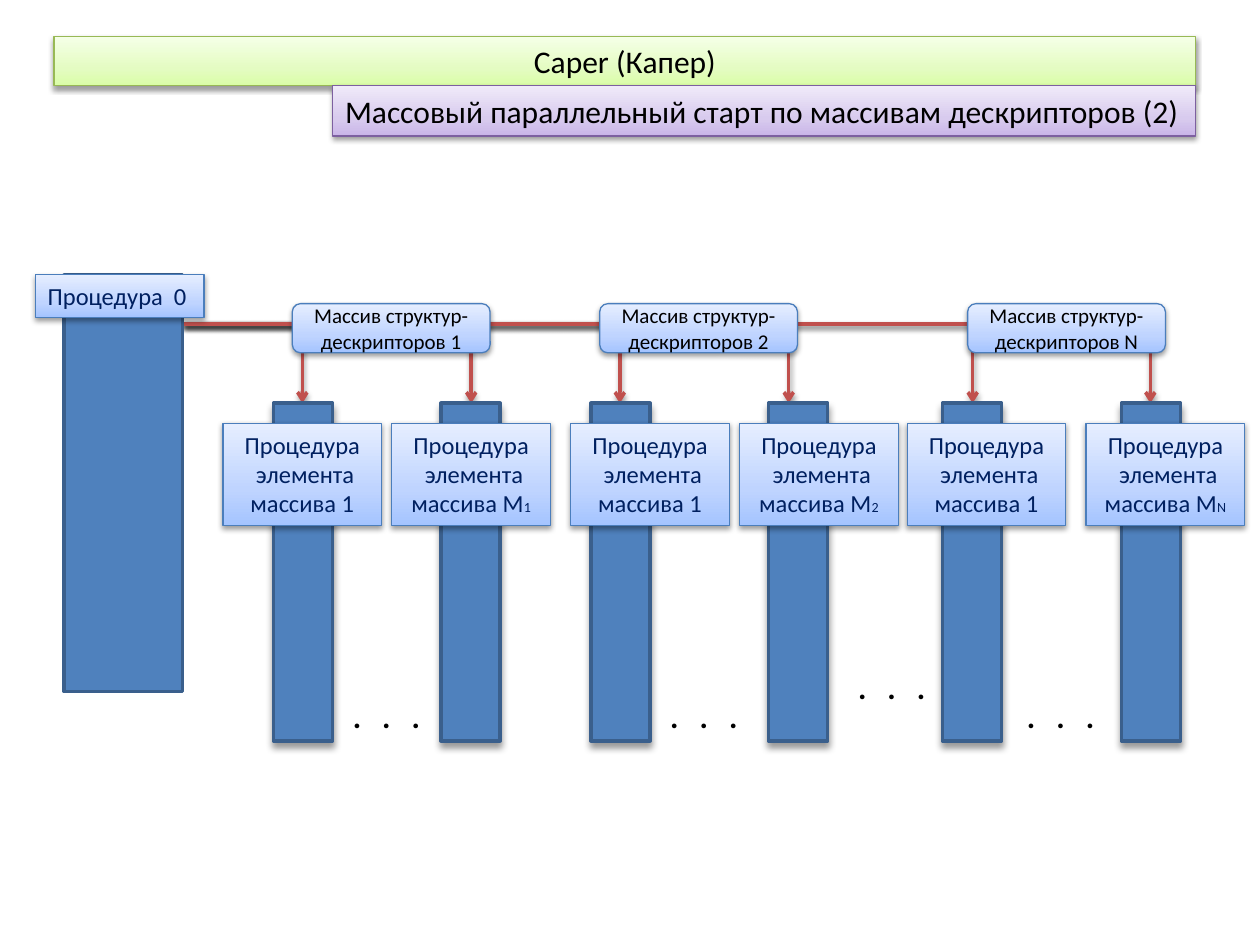
from copy import deepcopy
from lxml import etree
from pptx import Presentation
from pptx.dml.color import RGBColor
from pptx.enum.shapes import MSO_CONNECTOR, MSO_SHAPE
from pptx.enum.text import MSO_ANCHOR, PP_ALIGN
from pptx.oxml import parse_xml
from pptx.oxml.ns import nsdecls, qn
from pptx.util import Inches, Pt

RECT, ROUND = MSO_SHAPE.RECTANGLE, MSO_SHAPE.ROUNDED_RECTANGLE
ELBOW = MSO_CONNECTOR.ELBOW
LEFT, CENTER = PP_ALIGN.LEFT, PP_ALIGN.CENTER
TOP, MIDDLE = MSO_ANCHOR.TOP, MSO_ANCHOR.MIDDLE

COLORS = {
    "arrow": "C0504D", "bar": "4F81BD", "bar_line": "3A5F8C",
    "label": "002060", "text": "000000",
    "green_line": "98B955", "violet_line": "7D60A0", "blue_line": "4B7EBC",
}
GRADIENTS = {
    "green": ("DAFDA7", "E4FCC2", "F5FFE7"),
    "violet": ("C9B5E8", "D8CBEE", "F0EAF9"),
    "blue": ("A4C4FF", "BFD4FF", "E6EEFF"),
}
BOX_SHADOW, BAR_SHADOW = (40000, 20000, 38000), (50800, 38100, 40000)


def set_shadow(s, blur, dist, alpha):
    spPr = s._element.spPr
    for old in spPr.findall(qn("a:effectLst")):
        spPr.remove(old)
    spPr.append(parse_xml(
        f'<a:effectLst {nsdecls("a")}><a:outerShdw blurRad="{blur}" dist="{dist}" '
        f'dir="5400000" rotWithShape="0"><a:srgbClr val="000000">'
        f'<a:alpha val="{alpha}"/></a:srgbClr></a:outerShdw></a:effectLst>'))


def add_box(kind, box, theme, paragraphs, size, color="text", align=CENTER, anchor=TOP):
    sp = slide.shapes.add_shape(kind, *map(Inches, box))
    sp.fill.gradient()
    sp.fill.gradient_angle = 90
    first = sp._element.spPr.find(".//" + qn("a:gs"))
    first.addnext(deepcopy(first))
    for stop, position, value in zip(sp.fill.gradient_stops, (0, 0.35, 1), GRADIENTS[theme]):
        stop.position = position
        stop.color.rgb = RGBColor.from_string(value)
    sp.line.color.rgb = RGBColor.from_string(COLORS[theme + "_line"])
    sp.line.width = Pt(0.75)
    set_shadow(sp, *BOX_SHADOW)
    tf = sp.text_frame
    tf.word_wrap = True
    tf.vertical_anchor = anchor
    for i, runs in enumerate(paragraphs):
        p = tf.paragraphs[0] if i == 0 else tf.add_paragraph()
        p.alignment = align
        for j, text in enumerate(runs):
            r = p.add_run()
            r.text = text
            r.font.name = "Calibri"
            r.font.size = Pt(size if j == 0 else 8)
            r.font.color.rgb = RGBColor.from_string(COLORS[color])


prs = Presentation()
prs.slide_width, prs.slide_height = Inches(10), Inches(7.5)
slide = prs.slides.add_slide(prs.slide_layouts[6])

for x in (9.13, 6.26, 4.92, 7.72, 2.4, 3.74):
    s = slide.shapes.add_connector(ELBOW, Inches(1.46), Inches(2.57), Inches(x), Inches(3.2))
    s._element.spPr.find(qn("a:prstGeom")).set("prst", "bentConnector2")
    s.line.color.rgb = RGBColor.from_string(COLORS["arrow"])
    s.line.width = Pt(2)
    etree.SubElement(s.line._get_or_add_ln(), qn("a:tailEnd"), type="arrow")
    set_shadow(s, *BOX_SHADOW)

add_box(RECT, (0.43, 0.29, 9.06, 0.39), "green", [["Caper (Капер)"]], 18, anchor=MIDDLE)
add_box(RECT, (2.64, 0.68, 6.85, 0.4), "violet",
        [["Массовый параллельный старт по массивам дескрипторов (2)"]], 18, align=LEFT)

bars = [(0.51, 2.18, 0.94, 3.31)]
bars += [(x, 3.2, 0.47, 2.68) for x in (2.17, 3.5, 4.69, 6.1, 7.48, 8.9)]
for i, bar in enumerate(bars):
    sp = slide.shapes.add_shape(RECT, *map(Inches, bar))
    sp.fill.solid()
    sp.fill.fore_color.rgb = RGBColor.from_string(COLORS["bar"])
    sp.line.color.rgb = RGBColor.from_string(COLORS["bar_line"])
    sp.line.width = Pt(2)
    sp.shadow.inherit = False
    if i > 0:
        set_shadow(sp, *BAR_SHADOW)

add_box(RECT, (0.28, 2.18, 1.34, 0.34), "blue", [["Процедура  0"]], 14, "label", LEFT)

for x, number in ((2.32, "1"), (4.76, "2"), (7.68, "N")):
    add_box(ROUND, (x, 2.41, 1.57, 0.39), "blue",
            [["Массив структур-дескрипторов " + number]], 12, anchor=MIDDLE)

procedures = ((1.77, ["1"]), (3.11, ["M", "1"]), (4.53, ["1"]),
              (5.87, ["M", "2"]), (7.2, ["1"]), (8.62, ["M", "N"]))
for x, (index, *subscript) in procedures:
    add_box(RECT, (x, 3.36, 1.26, 0.81), "blue",
            [["Процедура"], [" элемента массива " + index, *subscript]], 14, "label")

for x, y, w in ((6.65, 5.25, 1.02), (2.64, 5.48, 0.94), (5.16, 5.48, 0.94), (7.99, 5.48, 0.94)):
    tf = slide.shapes.add_textbox(Inches(x), Inches(y), Inches(w), Inches(0.4)).text_frame
    tf.word_wrap = True
    tf.margin_left = Inches(0.16)
    r = tf.paragraphs[0].add_run()
    r.text = ". . ."
    r.font.name = "Calibri"
    r.font.size = Pt(18)
    r.font.bold = True
    r.font.color.rgb = RGBColor.from_string(COLORS["text"])
    r.font._element.set("spc", "400")

prs.save("out.pptx")
